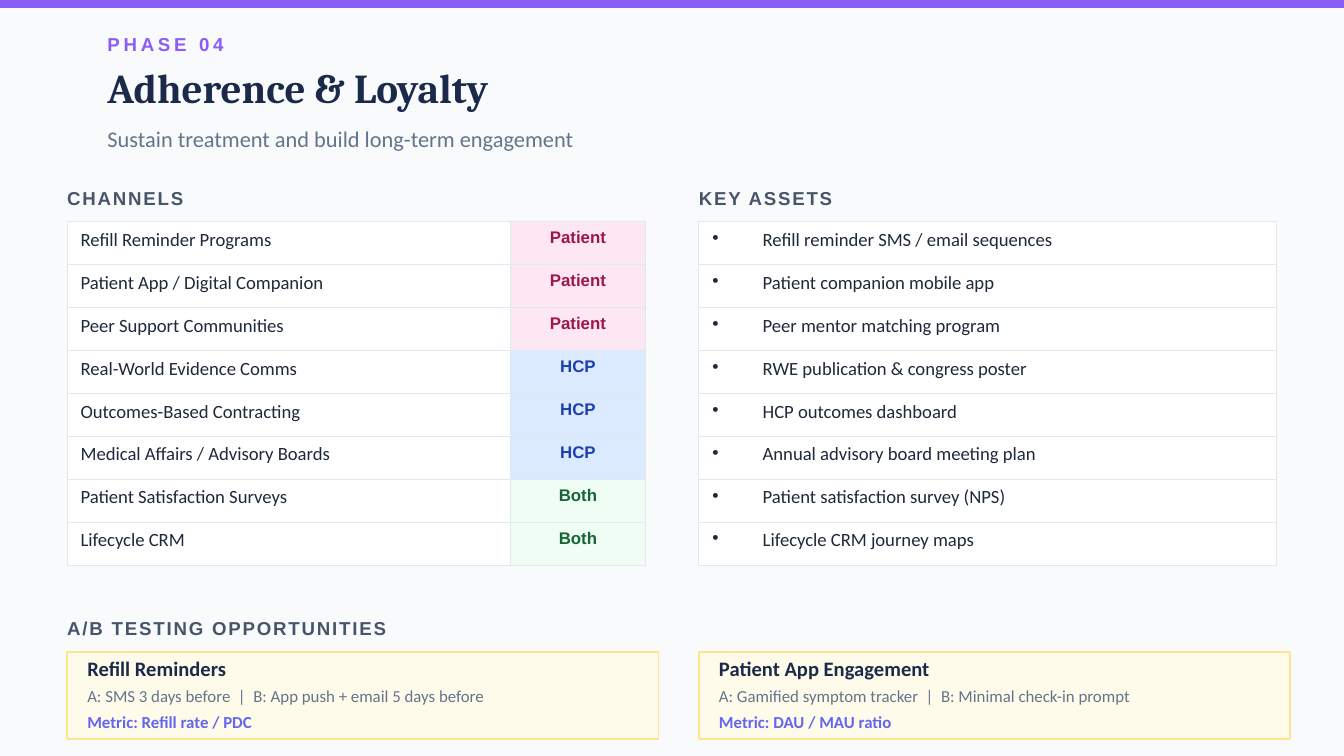
from lxml.etree import SubElement
from pptx import Presentation
from pptx.dml.color import RGBColor as RGB
from pptx.enum.shapes import MSO_SHAPE as Shape
from pptx.enum.text import MSO_ANCHOR as Anchor, PP_ALIGN as Align
from pptx.oxml.ns import qn
from pptx.util import Pt

PX = 4572  # EMU in one px, 200 px to the inch
WIDE, HIGH = 2000, 1125
LEFT, RIGHT = 100, 1040
TABLE_TOP, ROW, TABLE_W, TAG_W = 330, 64, 860, 200
CARD_TOP, CARD_W, CARD_H, PAD = 970, 880, 130, 30
INDENT = 75

PAPER = RGB(0xF8, 0xFA, 0xFC)
WHITE = RGB(0xFF, 0xFF, 0xFF)
VIOLET = RGB(0x8B, 0x5C, 0xF6)
INDIGO = RGB(0x63, 0x66, 0xF1)
NAVY = RGB(0x1B, 0x2A, 0x4A)
INK = RGB(0x1E, 0x29, 0x3B)
SLATE = RGB(0x47, 0x55, 0x69)
GREY = RGB(0x64, 0x74, 0x8B)
RULE = RGB(0xE2, 0xE8, 0xF0)
CREAM = RGB(0xFF, 0xFB, 0xEB)
GOLD = RGB(0xFD, 0xE6, 0x8A)

# Tag: text colour, cell fill
TAGS = {
    "Patient": (RGB(0x9D, 0x17, 0x4D), RGB(0xFC, 0xE7, 0xF3)),
    "HCP": (RGB(0x1E, 0x40, 0xAF), RGB(0xDB, 0xEA, 0xFE)),
    "Both": (RGB(0x16, 0x65, 0x34), RGB(0xF0, 0xFD, 0xF4)),
}

# Text, box, font, size, colour, bold, letter spacing
HEAD = [
    ("PHASE 04", (160, 40, 400, 50), "Arial", 10, VIOLET, True, 2),
    ("Adherence & Loyalty", (160, 84, 1000, 90), "Cambria", 22, NAVY, True, 0),
    ("Sustain treatment and build long-term engagement",
     (160, 176, 1600, 60), "Calibri", 12, GREY, False, 0),
]
LABELS = [
    ("CHANNELS", (LEFT, 270, 400, 50)),
    ("KEY ASSETS", (RIGHT, 270, 400, 50)),
    ("A/B TESTING OPPORTUNITIES", (LEFT, 910, 800, 50)),
]
CHANNELS = [
    ("Refill Reminder Programs", "Patient"),
    ("Patient App / Digital Companion", "Patient"),
    ("Peer Support Communities", "Patient"),
    ("Real-World Evidence Comms", "HCP"),
    ("Outcomes-Based Contracting", "HCP"),
    ("Medical Affairs / Advisory Boards", "HCP"),
    ("Patient Satisfaction Surveys", "Both"),
    ("Lifecycle CRM", "Both"),
]
ASSETS = [
    "Refill reminder SMS / email sequences",
    "Patient companion mobile app",
    "Peer mentor matching program",
    "RWE publication & congress poster",
    "HCP outcomes dashboard",
    "Annual advisory board meeting plan",
    "Patient satisfaction survey (NPS)",
    "Lifecycle CRM journey maps",
]
TESTS = [
    ("Refill Reminders",
     "A: SMS 3 days before  |  B: App push + email 5 days before",
     "Metric: Refill rate / PDC"),
    ("Patient App Engagement",
     "A: Gamified symptom tracker  |  B: Minimal check-in prompt",
     "Metric: DAU / MAU ratio"),
]
# Offset in the card, height, size, colour, bold
CARD_ROWS = [
    (0, 50, 11, NAVY, True),
    (46, 40, 9, GREY, False),
    (84, 40, 9, INDIGO, True),
]


def emu(box):
    return [n * PX for n in box]


def style(para, face, size, color, bold, space=0):
    for run in para.runs:
        font = run.font
        font.name, font.size, font.bold = face, Pt(size), bold
        font.color.rgb = color
        if space:
            run._r.get_or_add_rPr().set("spc", str(space * 100))


def add_text(slide, text, box, *look):
    frame = slide.shapes.add_textbox(*emu(box)).text_frame
    frame.word_wrap = True
    frame.vertical_anchor = Anchor.MIDDLE
    frame.margin_left = frame.margin_right = 0
    frame.margin_top = frame.margin_bottom = 0
    frame.text = text
    style(frame.paragraphs[0], *look)


def add_rect(slide, box, fill, line=None):
    rect = slide.shapes.add_shape(Shape.RECTANGLE, *emu(box))
    rect.shadow.inherit = False
    rect.fill.solid()
    rect.fill.fore_color.rgb = fill
    if line:
        rect.line.color.rgb = line
        rect.line.width = Pt(1)
    else:
        rect.line.fill.background()


def add_grid(slide, left, widths, count):
    box = (left, TABLE_TOP, sum(widths), ROW * count)
    table = slide.shapes.add_table(count, len(widths), *emu(box)).table
    table.first_row = table.horz_banding = False
    for col, width in zip(table.columns, widths):
        col.width = width * PX
    for row in table.rows:
        row.height = ROW * PX
    return table


def fill_cell(cell, text, fill, *look):
    """Write the cell and give it borders, which must precede the fill."""
    props = cell._tc.get_or_add_tcPr()
    for side in ("a:lnL", "a:lnR", "a:lnT", "a:lnB"):
        line = SubElement(props, qn(side), w=str(Pt(0.5)))
        solid = SubElement(line, qn("a:solidFill"))
        SubElement(solid, qn("a:srgbClr"), val=str(RULE))
    cell.fill.solid()
    cell.fill.fore_color.rgb = fill
    cell.text = text
    para = cell.text_frame.paragraphs[0]
    style(para, *look)
    return para


def add_bullet(para):
    props = para._p.get_or_add_pPr()
    props.set("marL", str(INDENT * PX))
    props.set("indent", str(-INDENT * PX))
    SubElement(props, qn("a:buSzPct"), val="100000")
    SubElement(props, qn("a:buChar"), char="•")


def main():
    deck = Presentation()
    deck.slide_width, deck.slide_height = emu((WIDE, HIGH))
    slide = deck.slides.add_slide(deck.slide_layouts[6])
    slide.background.fill.solid()
    slide.background.fill.fore_color.rgb = PAPER

    add_rect(slide, (0, 0, WIDE, 12), VIOLET)
    for item in HEAD:
        add_text(slide, *item)
    for text, box in LABELS:
        add_text(slide, text, box, "Arial", 10, SLATE, True, 1)

    body = ("Calibri", 10, INK, False)
    grid = add_grid(slide, LEFT, (TABLE_W - TAG_W, TAG_W), len(CHANNELS))
    for i, (name, tag) in enumerate(CHANNELS):
        color, fill = TAGS[tag]
        fill_cell(grid.cell(i, 0), name, WHITE, *body)
        para = fill_cell(grid.cell(i, 1), tag, fill, "Arial", 9, color, True)
        para.alignment = Align.CENTER

    grid = add_grid(slide, RIGHT, (TABLE_W,), len(ASSETS))
    for i, name in enumerate(ASSETS):
        add_bullet(fill_cell(grid.cell(i, 0), name, WHITE, *body))

    for left, lines in zip((LEFT, RIGHT), TESTS):
        add_rect(slide, (left, CARD_TOP, CARD_W, CARD_H), CREAM, GOLD)
        for text, (down, high, *look) in zip(lines, CARD_ROWS):
            box = (left + PAD, CARD_TOP + down, CARD_W - 2 * PAD, high)
            add_text(slide, text, box, "Calibri", *look)

    deck.save("out.pptx")


if __name__ == "__main__":
    main()
